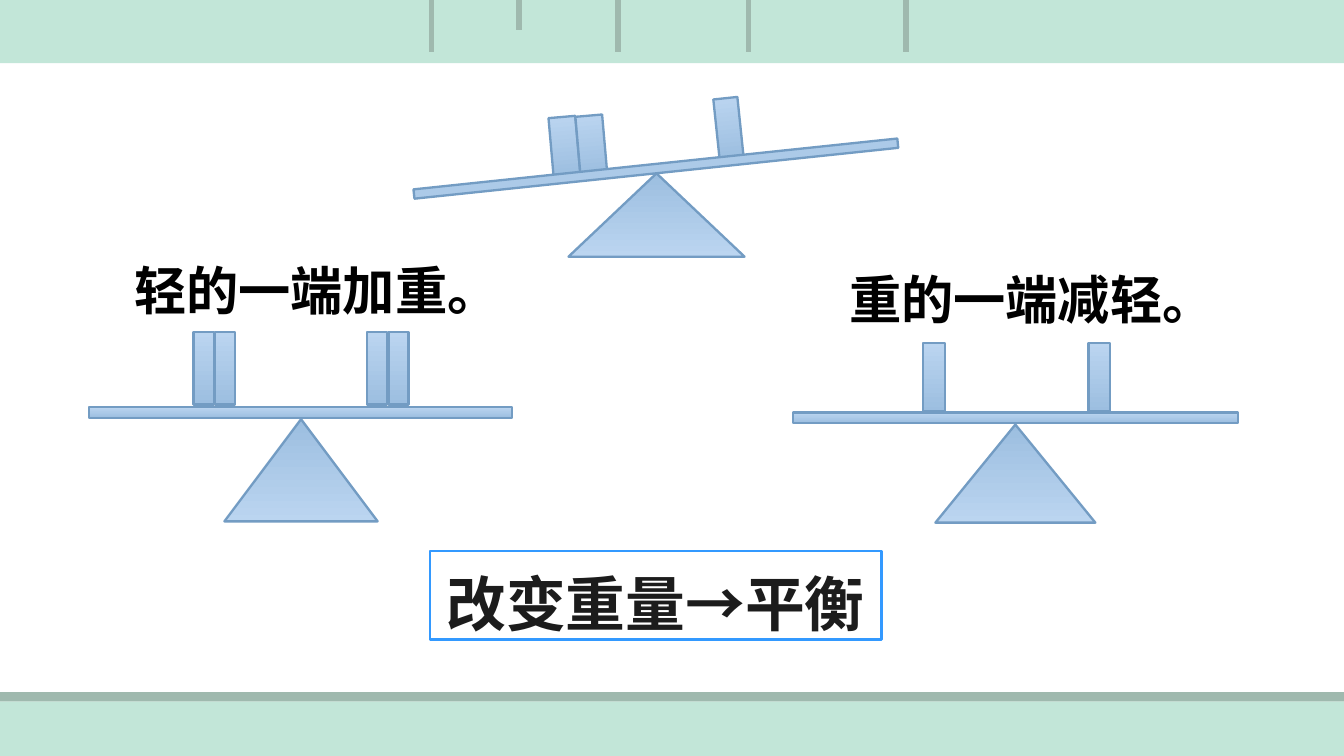
import pptx
import pptx.util
import pptx.dml.color
import pptx.enum.shapes
import pptx.enum.text
import pptx.oxml
import pptx.oxml.ns

Inches, Pt = pptx.util.Inches, pptx.util.Pt
SHAPE = pptx.enum.shapes.MSO_SHAPE
FONT = "Noto Sans CJK SC"
WIDTH = 10
HEIGHT = WIDTH * 9 / 16
COLORS = {
    "mint": "C2E6D8", "sage": "9FB9AE", "white": "FFFFFF", "black": "000000",
    "light": "BBD5F0", "mid": "9CBEE0", "edge": "739CC3",
    "frame": "3399FF", "ink": "1C1C1C",
}
STRINGS = [(4.6, 0.39), (3.86, 0.22), (5.57, 0.39), (3.21, 0.39), (6.74, 0.39)]
BANDS = [
    ((0, 0.41, WIDTH, 4.81), "white"),
    ((0, 0.4, WIDTH, 0.07), "mint"),
    ((0, 5.15, WIDTH, 0.07), "sage"),
]
SCALES = [
    {"weights": [(5.33, 0.73, 0.18, 0.44, 354), (4.1, 0.87, 0.2, 0.43, 355),
                 (4.3, 0.86, 0.2, 0.43, 355)],
     "beam": (3.07, 1.22, 3.62, 0.07, 354),
     "stand": (4.23, 1.29, 1.31, 0.62)},
    {"weights": [(x, 2.47, 0.15, 0.54, 0) for x in (2.89, 2.73, 1.44, 1.6)],
     "beam": (0.66, 3.03, 3.15, 0.08, 0),
     "stand": (1.67, 3.12, 1.14, 0.76)},
    {"weights": [(x, 2.55, 0.16, 0.51, 0) for x in (8.1, 6.87)],
     "beam": (5.9, 3.07, 3.31, 0.08, 0),
     "stand": (6.96, 3.16, 1.19, 0.73)},
]
CAPTIONS = [
    ("轻的一端加重。", (0.9, 1.87, 3.36, 0.57)),
    ("重的一端减轻。", (6.22, 1.94, 2.96, 0.57)),
]
CONCLUSION = ("改变重量→平衡", (3.2, 4.1, 3.36, 0.66))


def rgb(name):
    return pptx.dml.color.RGBColor.from_string(COLORS[name])


def add_box(shapes, box, fill=None, line=None, width=1.25, kind=SHAPE.RECTANGLE):
    s = shapes.add_shape(kind, *map(Inches, box))
    s.shadow.inherit = False
    if fill:
        s.fill.solid()
        s.fill.fore_color.rgb = rgb(fill)
    else:
        s.fill.gradient()
        s.fill.gradient_angle = 270
        for i, (stop, name) in enumerate(zip(s.fill.gradient_stops, ("light", "mid"))):
            stop.color.rgb = rgb(name)
            stop.position = i
    if line:
        s.line.color.rgb = rgb(line)
        s.line.width = Pt(width)
    else:
        s.line.fill.background()
    return s


def add_string(shapes, x, bottom):
    c = shapes.add_connector(pptx.enum.shapes.MSO_CONNECTOR.STRAIGHT,
                             Inches(x), 0, Inches(x), Inches(bottom))
    c.line.color.rgb = rgb("sage")
    c.line.width = Pt(3)
    c._element.spPr.append(pptx.oxml.parse_xml(
        "<a:effectLst %s/>" % pptx.oxml.ns.nsdecls("a")))


def add_scale(shapes, scale):
    group = shapes.add_group_shape().shapes
    for *box, angle in scale["weights"] + [scale["beam"]]:
        add_box(group, box, line="edge").rotation = angle
    stand = add_box(group, scale["stand"], line="edge", kind=SHAPE.FLOWCHART_MERGE)
    stand._element.spPr.xfrm.set("flipV", "1")


def set_text(s, text, size, color):
    tf = s.text_frame
    tf.word_wrap = True
    p = tf.paragraphs[0]
    p.text = text
    p.font.size = Pt(size)
    p.font.bold = True
    p.font.name = FONT
    p.font.color.rgb = rgb(color)
    ea = pptx.oxml.parse_xml(
        '<a:ea %s typeface="%s"/>' % (pptx.oxml.ns.nsdecls("a"), FONT))
    p.font._element.find(pptx.oxml.ns.qn("a:latin")).addnext(ea)
    return p


def main():
    prs = pptx.Presentation()
    prs.slide_width, prs.slide_height = Inches(WIDTH), Inches(HEIGHT)
    slide = prs.slides.add_slide(prs.slide_layouts[6])
    shapes = slide.shapes
    slide.background.fill.solid()
    slide.background.fill.fore_color.rgb = rgb("mint")

    for x, bottom in STRINGS:
        add_string(shapes, x, bottom)
    for box, fill in BANDS:
        add_box(shapes, box, fill)
    for scale in SCALES:
        add_scale(shapes, scale)

    for text, box in CAPTIONS:
        s = shapes.add_textbox(*map(Inches, box))
        set_text(s, text, 28, "black")
        s.text_frame.auto_size = pptx.enum.text.MSO_AUTO_SIZE.SHAPE_TO_FIT_TEXT

    text, box = CONCLUSION
    s = add_box(shapes, box, "white", "frame", 1.5)
    p = set_text(s, text, 32, "ink")
    p.alignment = pptx.enum.text.PP_ALIGN.CENTER
    p.line_spacing = 1.2
    s.text_frame.vertical_anchor = pptx.enum.text.MSO_ANCHOR.MIDDLE
    prs.save("out.pptx")


if __name__ == "__main__":
    main()
